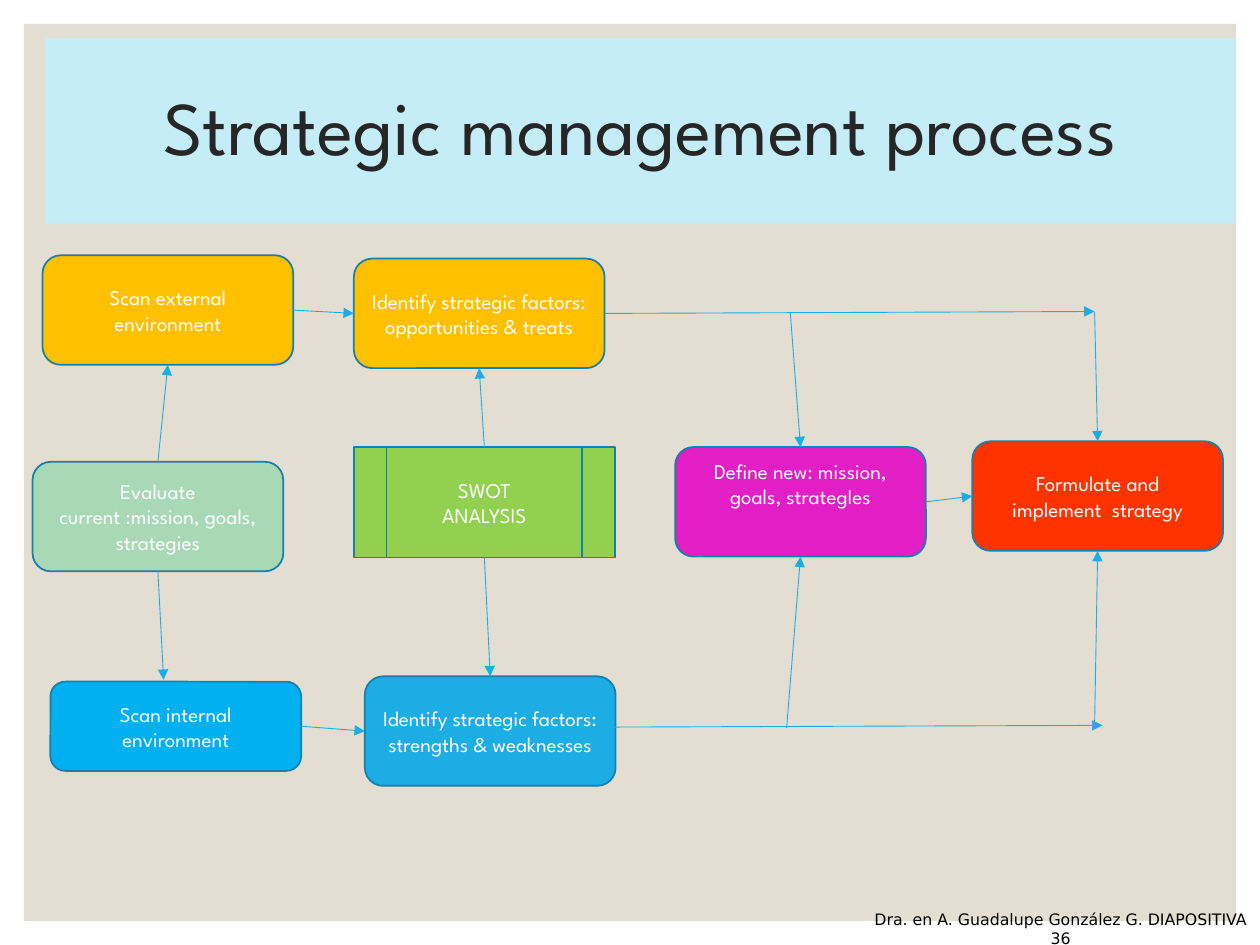
from typing import NamedTuple, Union

from lxml.etree import SubElement
from pptx import Presentation
from pptx.dml.color import RGBColor
from pptx.enum.shapes import MSO_CONNECTOR, MSO_SHAPE as Shp
from pptx.enum.text import MSO_ANCHOR as Anchor, PP_ALIGN
from pptx.oxml.ns import qn
from pptx.util import Pt

BEIGE = RGBColor(0xE3, 0xDE, 0xD1)
PALE_BLUE = RGBColor(0xC5, 0xED, 0xF8)
DARK = RGBColor(0x26, 0x26, 0x26)
BLACK = RGBColor(0, 0, 0)
WHITE = RGBColor(0xFF, 0xFF, 0xFF)
SKY = RGBColor(0x00, 0xB0, 0xF0)
MAGENTA = RGBColor(0xE1, 0x1F, 0xC5)
RED = RGBColor(0xFF, 0x33, 0x00)
AMBER = RGBColor(0xFF, 0xC0, 0x00)
MINT = RGBColor(0xA9, 0xD8, 0xB7)
BLUE = RGBColor(0x1C, 0xAD, 0xE4)
GREEN = RGBColor(0x92, 0xD0, 0x50)
OUTLINE = RGBColor(0x15, 0x80, 0xA9)

MAIN_FONT, FOOTER_FONT = "League Spartan", "DejaVu Sans"
BOX_W, BOX_H = 143.3, 62.6
TOP, LEFT, BOTTOM, RIGHT = range(4)  # connection sites of a box


class Box(NamedTuple):
    name: str
    x: float
    y: float
    text: str
    fill: RGBColor
    w: float = BOX_W
    h: float = BOX_H
    shape: Shp = Shp.ROUNDED_RECTANGLE
    bottom_inset: float = 3.6


class Site(NamedTuple):
    box: str
    side: int


class Point(NamedTuple):
    x: float
    y: float


End = Union[Site, Point]


class Arrow(NamedTuple):
    start: End
    end: End


BOXES = [
    Box("internal", 28.8, 389.5, "Scan internal environment", SKY, h=51),
    Box("define", 385.8, 255.5, "Define new: mission, goals, strategIes", MAGENTA, bottom_inset=24),
    Box("formulate", 555.6, 252.2, "Formulate and implement  strategy", RED),
    Box("opportunities", 202.2, 147.8, "Identify strategic factors: opportunities & treats", AMBER),
    Box("external", 24.3, 145.9, "Scan external environment", AMBER),
    Box("evaluate", 18.6, 263.9, "Evaluate current :mission, goals, strategies", MINT),
    Box("strengths", 208.5, 386.5, "Identify strategic factors: strengths & weaknesses", BLUE),
    Box("swot", 202.2, 255.5, "SWOT\nANALYSIS", GREEN, w=149.2, h=63,
        shape=Shp.FLOWCHART_PREDEFINED_PROCESS),
]

ARROWS = [
    Arrow(Site("evaluate", TOP), Site("external", BOTTOM)),
    Arrow(Site("evaluate", BOTTOM), Point(93.5, 388.5)),
    Arrow(Site("external", RIGHT), Site("opportunities", LEFT)),
    Arrow(Site("internal", RIGHT), Site("strengths", LEFT)),
    Arrow(Site("swot", TOP), Site("opportunities", BOTTOM)),
    Arrow(Site("swot", BOTTOM), Site("strengths", TOP)),
    Arrow(Site("define", RIGHT), Site("formulate", LEFT)),
    # Upper and lower branches towards the strategy boxes
    Arrow(Site("opportunities", RIGHT), Point(625.5, 178)),
    Arrow(Point(451.6, 178.5), Site("define", TOP)),
    Arrow(Point(449.5, 416), Site("define", BOTTOM)),
    Arrow(Point(350, 415.5), Point(630, 414.5)),
    Arrow(Point(625.5, 178.5), Site("formulate", TOP)),
    Arrow(Point(625.5, 414), Site("formulate", BOTTOM)),
]


def write_text(shape, text: str, size: float, color: RGBColor,
               font: str = MAIN_FONT, anchor: Anchor = Anchor.MIDDLE) -> None:
    tf = shape.text_frame
    tf.text = text
    tf.word_wrap = True
    tf.vertical_anchor = anchor
    for p in tf.paragraphs:
        p.alignment = PP_ALIGN.CENTER
        for r in p.runs:
            r.font.name, r.font.size = font, Pt(size)
            r.font.color.rgb = color


def add_panel(s, x: float, y: float, w: float, h: float, fill: RGBColor,
              shape: Shp = Shp.RECTANGLE):
    sp = s.shapes.add_shape(shape, Pt(x), Pt(y), Pt(w), Pt(h))
    sp.shadow.inherit = False
    sp.fill.solid()
    sp.fill.fore_color.rgb = fill
    sp.line.fill.background()
    return sp


def add_box(s, box: Box):
    sp = add_panel(s, box.x, box.y, box.w, box.h, box.fill, box.shape)
    sp.line.color.rgb = OUTLINE
    sp.line.width = Pt(1)
    write_text(sp, box.text, 12, WHITE)
    sp.text_frame.margin_bottom = Pt(box.bottom_inset)
    return sp


def add_arrow(s, arrow: Arrow, shapes: dict) -> None:
    points = [Pt(v) for end in arrow for v in (end if isinstance(end, Point) else (0, 0))]
    c = s.shapes.add_connector(MSO_CONNECTOR.STRAIGHT, *points)
    for end, connect in zip(arrow, (c.begin_connect, c.end_connect)):
        if isinstance(end, Site):
            connect(shapes[end.box], end.side)
    c.line.color.rgb = BLUE
    c.line.width = Pt(0.5)
    SubElement(c.line._get_or_add_ln(), qn("a:tailEnd"), type="triangle")
    SubElement(c._element.spPr, qn("a:effectLst"))


def main() -> None:
    prs = Presentation()
    prs.slide_width, prs.slide_height = Pt(720), Pt(540)
    s = prs.slides.add_slide(prs.slide_layouts[6])

    # Background and title
    add_panel(s, 13.7, 13.7, 692.6, 512.6, BEIGE)
    title = add_panel(s, 25.5, 21.6, 680.5, 106.3, PALE_BLUE)
    write_text(title, "Strategic management process", 43.2, DARK)
    title.text_frame.paragraphs[0].line_spacing = 0.9

    # Footer
    footer = s.shapes.add_textbox(Pt(492), Pt(507.6), Pt(228), Pt(37.4))
    write_text(footer, "Dra. en A. Guadalupe González G. DIAPOSITIVA 36", 9, BLACK,
               FOOTER_FONT, Anchor.BOTTOM)

    # Process boxes and arrows
    shapes = {box.name: add_box(s, box) for box in BOXES}
    for arrow in ARROWS:
        add_arrow(s, arrow, shapes)

    prs.save("out.pptx")


if __name__ == "__main__":
    main()
